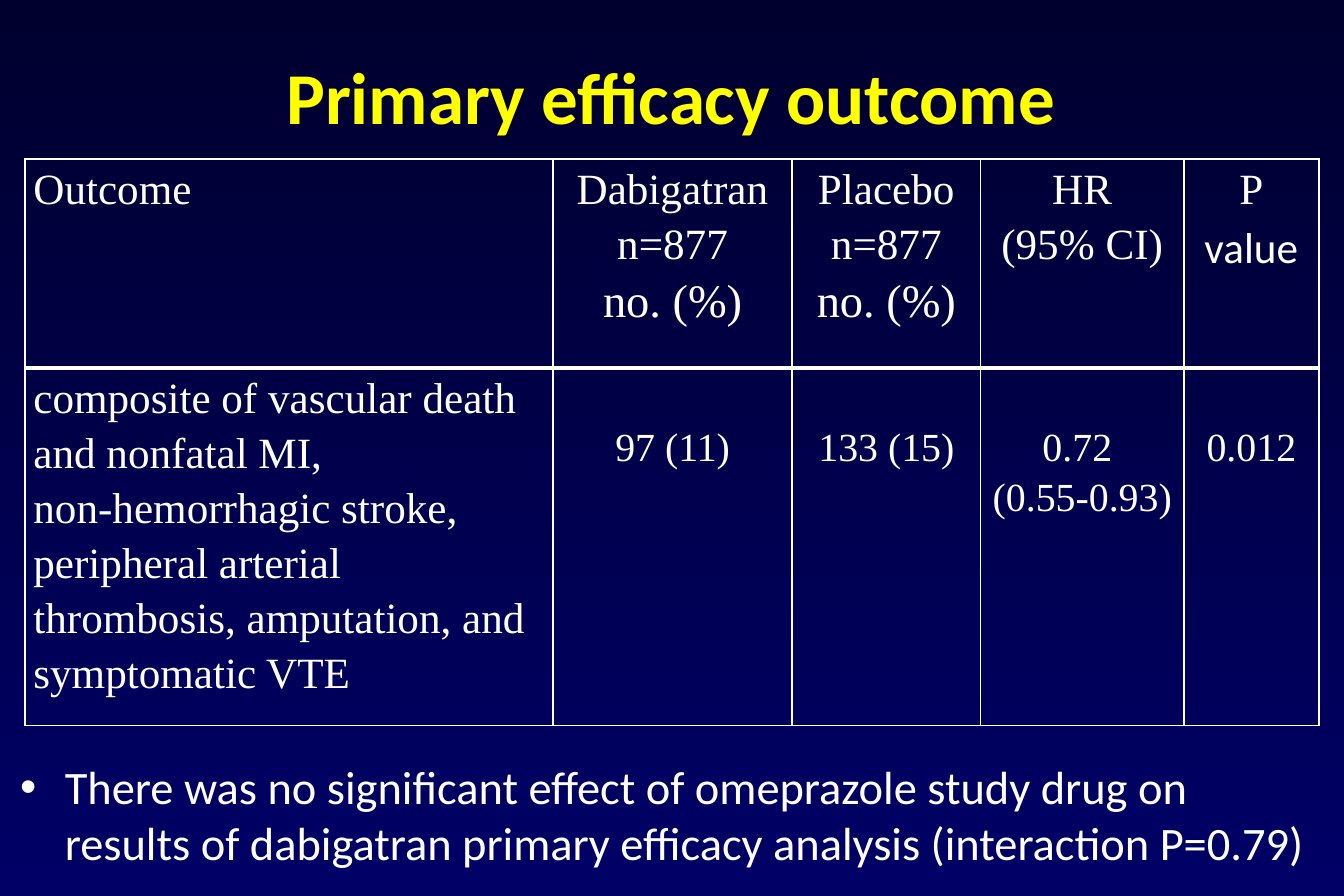
import pptx
import pptx.util
import pptx.dml.color
import pptx.enum.text
import pptx.oxml
import pptx.oxml.ns
from lxml import etree

Cm, Pt = pptx.util.Cm, pptx.util.Pt
RGB = pptx.dml.color.RGBColor
ALIGN = pptx.enum.text.PP_ALIGN
WHITE = RGB(0xFF, 0xFF, 0xFF)
YELLOW = RGB(0xFF, 0xFF, 0x00)
DARK = RGB(0x00, 0x00, 0x2F)
NAVY = RGB(0x00, 0x00, 0x66)
SANS, SERIF = "Calibri", "Times New Roman"
qn = pptx.oxml.ns.qn


def style(para, size, face, color=WHITE, bold=False):
    for run in para.runs:
        font = run.font
        font.size, font.name, font.bold = Pt(size), face, bold
        font.color.rgb = color


def edge(cell, side, width):
    line = etree.SubElement(cell._tc.get_or_add_tcPr(), qn("a:" + side), w=str(Pt(width)))
    fill = etree.SubElement(line, qn("a:solidFill"))
    etree.SubElement(fill, qn("a:srgbClr"), val=str(WHITE))


deck = pptx.Presentation()
deck.slide_width, deck.slide_height = Cm(28.575), Cm(19.05)
slide = deck.slides.add_slide(deck.slide_layouts[6])

# Background
back = slide.background.fill
back.gradient()
back.gradient_angle = 270
for stop, color in zip(back.gradient_stops, (DARK, NAVY)):
    stop.color.rgb = color

# Title
title = slide.shapes.add_textbox(Cm(2.13), Cm(0.43), Cm(24.28), Cm(3.18)).text_frame
title.word_wrap = True
title.vertical_anchor = pptx.enum.text.MSO_ANCHOR.MIDDLE
title.text = "Primary efficacy outcome"
title.paragraphs[0].alignment = ALIGN.CENTER
style(title.paragraphs[0], 44, SANS, YELLOW, True)

# Outcome table
rows = [
    ["Outcome", "Dabigatran\nn=877\nno. (%)", "Placebo\nn=877\nno. (%)",
     "HR\n(95% CI)", "P\nvalue"],
    ["composite of vascular death and nonfatal MI,\n"
     "non-hemorrhagic stroke, peripheral arterial thrombosis, amputation, "
     "and symptomatic VTE",
     "97 (11)", "133 (15)", "0.72 \n(0.55-0.93)", "0.012"],
]
widths = [11.23, 5.08, 4.01, 4.32, 2.87]
heights = [4.45, 7]
frame = slide.shapes.add_table(2, 5, Cm(0.53), Cm(3.38), Cm(sum(widths)), Cm(sum(heights)))
table = frame.table
table.first_row = table.horz_banding = False
for col, width in zip(table.columns, widths):
    col.width = Cm(width)
for row, height in zip(table.rows, heights):
    row.height = Cm(height)

for r, texts in enumerate(rows):
    for c, text in enumerate(texts):
        cell = table.cell(r, c)
        value = r == 1 and c > 0
        cell.margin_left = cell.margin_right = Cm(0.18)
        cell.margin_top = Cm(1.08 if value else 0)
        cell.margin_bottom = 0
        # The rule under the header is heavier
        top, bottom = ((1, 3), (3, 1))[r]
        for side, width in (("lnL", 1), ("lnR", 1), ("lnT", top), ("lnB", bottom)):
            edge(cell, side, width)
        cell.fill.background()
        cell.text_frame.text = text
        for para in cell.text_frame.paragraphs:
            para.line_spacing = 1.15
            para.alignment = ALIGN.CENTER if c else ALIGN.LEFT
            size = 24 if value else 28 if para.text == "no. (%)" else 26
            style(para, size, SANS if para.text == "value" else SERIF)

# Bullet note
note = slide.shapes.add_textbox(Cm(0.18), Cm(16), Cm(28.14), Cm(2.62)).text_frame
note.word_wrap = True
note.text = ("There was no significant effect of omeprazole study drug on results of "
             "dabigatran primary efficacy analysis (interaction P=0.79)")
para = note.paragraphs[0]
style(para, 28, SANS)
props = para._p.get_or_add_pPr()
props.set("marL", str(Cm(0.95)))
props.set("indent", str(-Cm(0.95)))
etree.SubElement(props, qn("a:buFont"), typeface="Arial")
etree.SubElement(props, qn("a:buChar"), char="•")

deck.save("out.pptx")
